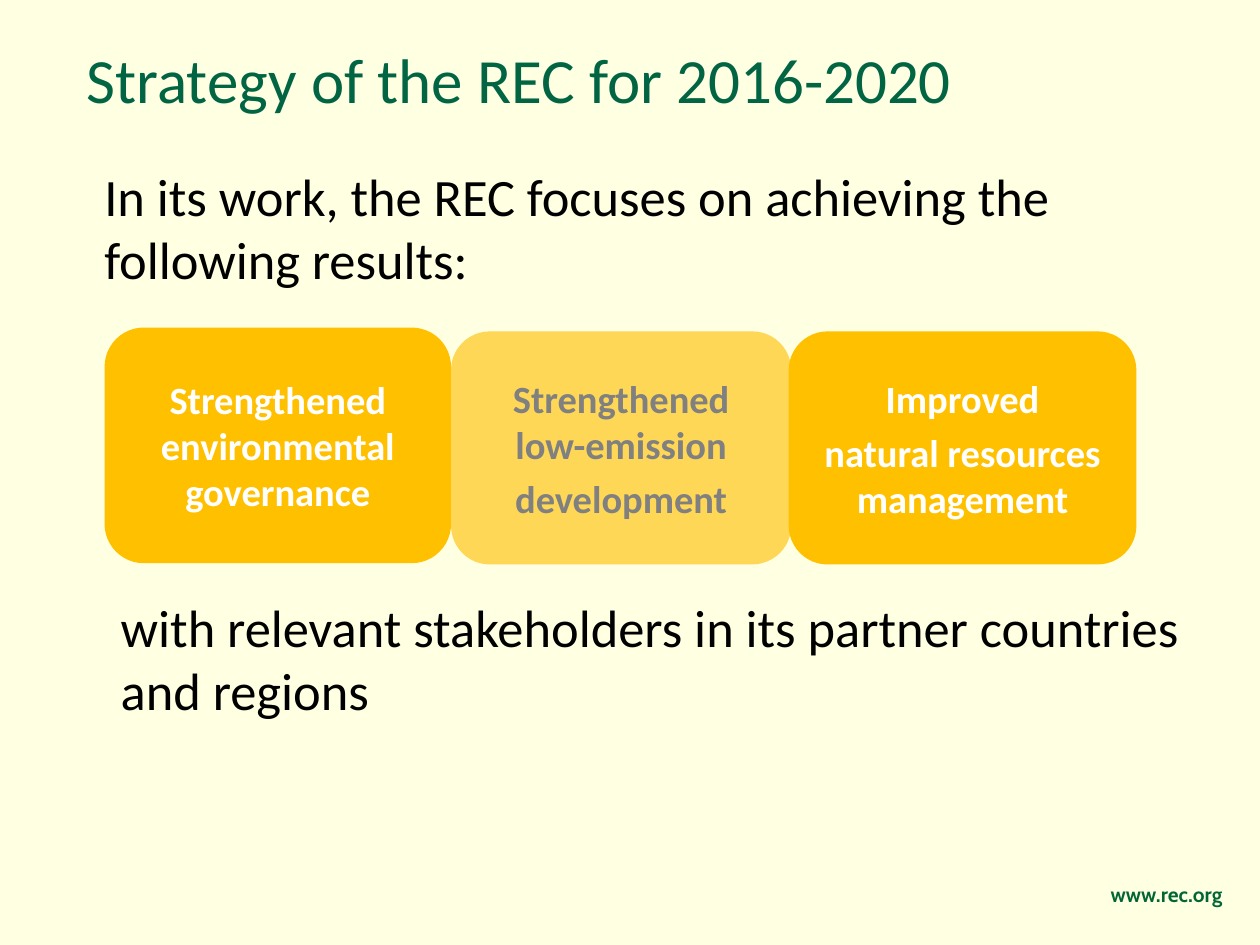
from pptx import Presentation
from pptx.dml.color import RGBColor
from pptx.enum.shapes import MSO_SHAPE
from pptx.enum.text import MSO_ANCHOR, PP_ALIGN
from pptx.util import Inches, Pt

CREAM = RGBColor(0xFF, 0xFF, 0xE1)
TITLE_GREEN = RGBColor(0x01, 0x65, 0x44)
SITE_GREEN = RGBColor(0x00, 0x66, 0x34)
BLACK = RGBColor(0, 0, 0)
WHITE = RGBColor(0xFF, 0xFF, 0xFF)
GRAY = RGBColor(0x80, 0x80, 0x80)
AMBER = RGBColor(0xFF, 0xC0, 0x00)
PALE_AMBER = RGBColor(0xFF, 0xD7, 0x57)

TITLE = "Strategy of the REC for 2016-2020"
INTRO = "In its work, the REC focuses on achieving the following results:"
CLOSING = "with relevant stakeholders in its partner countries and regions"
WEBSITE = "www.rec.org"

RESULTS = [
    (["Strengthened environmental governance"], (0.83, 2.6, 2.75, 1.87), AMBER, WHITE),
    (["Strengthened low-emission", "development"], (3.58, 2.63, 2.7, 1.85), PALE_AMBER, GRAY),
    (["Improved", "natural resources management"], (6.26, 2.63, 2.76, 1.85), AMBER, WHITE),
]


def write(shape, lines, size, color, bold=False, font="Calibri",
          align=PP_ALIGN.LEFT, anchor=MSO_ANCHOR.TOP):
    frame = shape.text_frame
    frame.word_wrap = True
    frame.vertical_anchor = anchor
    frame.text = "\n".join(lines)
    for index, paragraph in enumerate(frame.paragraphs):
        paragraph.alignment = align
        if index:
            paragraph.space_before = Pt(size * 0.2)
        for run in paragraph.runs:
            run.font.name = font
            run.font.size = Pt(size)
            run.font.bold = bold
            run.font.color.rgb = color


def add_text(slide, box, text, size, color, **style):
    write(slide.shapes.add_textbox(*map(Inches, box)), [text], size, color, **style)


def add_result(slide, lines, box, fill, color):
    shape = slide.shapes.add_shape(MSO_SHAPE.ROUNDED_RECTANGLE, *map(Inches, box))
    shape.shadow.inherit = False
    shape.fill.solid()
    shape.fill.fore_color.rgb = fill
    shape.line.fill.background()
    write(shape, lines, 22, color, bold=True, align=PP_ALIGN.CENTER, anchor=MSO_ANCHOR.MIDDLE)


def main():
    presentation = Presentation()
    presentation.slide_width = Inches(10)
    presentation.slide_height = Inches(7.5)
    slide = presentation.slides.add_slide(presentation.slide_layouts[6])
    slide.background.fill.solid()
    slide.background.fill.fore_color.rgb = CREAM

    add_text(slide, (8.15, 6.95, 1.65, 0.3), WEBSITE, 12, SITE_GREEN,
             bold=True, font="Cabin", align=PP_ALIGN.RIGHT)
    add_text(slide, (0.59, 0, 9.41, 1.25), TITLE, 36, TITLE_GREEN, anchor=MSO_ANCHOR.MIDDLE)
    add_text(slide, (0.73, 1.25, 9.14, 1.2), INTRO, 30, BLACK)
    add_text(slide, (0.86, 4.67, 9.01, 1.2), CLOSING, 30, BLACK)
    for result in RESULTS:
        add_result(slide, *result)

    presentation.save("out.pptx")


if __name__ == "__main__":
    main()
